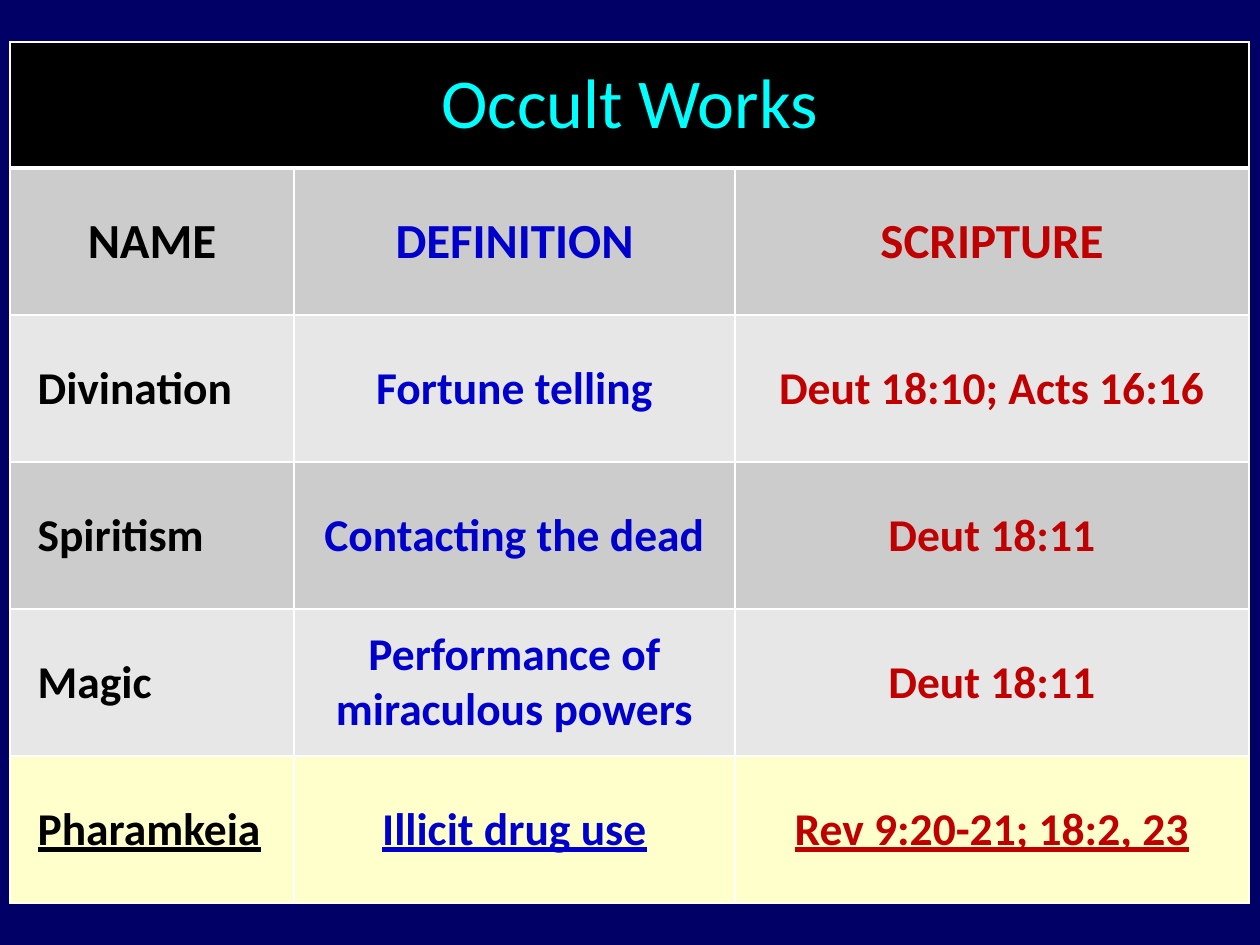
import pptx
import pptx.dml.color
import pptx.enum.text
import pptx.oxml.ns
import pptx.util
from lxml import etree

EMU_PER_PX = 914400 / 126
FONT = "Calibri"
CENTER = pptx.enum.text.PP_ALIGN.CENTER
LEFT = pptx.enum.text.PP_ALIGN.LEFT

TITLE = "Occult Works"
COLUMN_WIDTHS = [284, 441, 514]
COLUMN_COLORS = ["000000", "0000CC", "C00000"]
TITLE_HEIGHT, ROW_HEIGHT = 126, 147
ROWS = [
    ("NAME", "DEFINITION", "SCRIPTURE"),
    ("Divination", "Fortune telling", "Deut 18:10; Acts 16:16"),
    ("Spiritism", "Contacting the dead", "Deut 18:11"),
    ("Magic", "Performance of miraculous powers", "Deut 18:11"),
    ("Pharamkeia", "Illicit drug use", "Rev 9:20-21; 18:2, 23"),
]
BAND_FILLS = ["CCCCCC", "E7E7E7"]
HIGHLIGHT = "FFFFCC"


def px(length):
    return pptx.util.Emu(round(length * EMU_PER_PX))


def color(value):
    return pptx.dml.color.RGBColor.from_string(value)


def write_text(cell, text, size=26, ink="000000", bold=True, underline=False,
               align=CENTER, indent=0):
    cell.vertical_anchor = pptx.enum.text.MSO_ANCHOR.MIDDLE
    para = cell.text_frame.paragraphs[0]
    para.alignment = align
    if indent:
        para._p.get_or_add_pPr().set("marL", str(px(indent)))
    span = para.add_run()
    span.text = text
    span.font.name = FONT
    span.font.size = pptx.util.Pt(size)
    span.font.bold = bold
    span.font.underline = underline
    span.font.color.rgb = color(ink)


def paint_cell(cell, fill, top=1, bottom=1):
    """Fill a cell and give it white borders, widths in points."""
    cell.fill.solid()
    cell.fill.fore_color.rgb = color(fill)
    properties = cell._tc.get_or_add_tcPr()
    qn = pptx.oxml.ns.qn
    sides = [("a:lnL", 1), ("a:lnR", 1), ("a:lnT", top), ("a:lnB", bottom)]
    for position, (side, width) in enumerate(sides):
        line = etree.Element(qn(side), w=str(pptx.util.Pt(width)))
        solid = etree.SubElement(line, qn("a:solidFill"))
        etree.SubElement(solid, qn("a:srgbClr"), val="FFFFFF")
        properties.insert(position, line)


def add_grid(page, left, top):
    row_heights = [TITLE_HEIGHT] + [ROW_HEIGHT] * len(ROWS)
    frame = page.shapes.add_table(
        len(row_heights), len(COLUMN_WIDTHS), px(left), px(top),
        px(sum(COLUMN_WIDTHS)), px(sum(row_heights)))
    table = frame.table
    for column, width in zip(table.columns, COLUMN_WIDTHS):
        column.width = px(width)
    for row, height in zip(table.rows, row_heights):
        row.height = px(height)
    return table


def fill_title(table):
    for cell in table.rows[0].cells:
        paint_cell(cell, "000000", bottom=3)
    title = table.cell(0, 0)
    title.merge(table.cell(0, len(COLUMN_WIDTHS) - 1))
    write_text(title, TITLE, size=40, ink="00FFFF", bold=False)


def fill_rows(table):
    for index, words in enumerate(ROWS):
        heading = index == 0
        last = index == len(ROWS) - 1
        fill = HIGHLIGHT if last else BAND_FILLS[index % 2]
        for column, text in enumerate(words):
            cell = table.cell(index + 1, column)
            paint_cell(cell, fill, top=3 if heading else 1)
            is_name = column == 0 and not heading
            write_text(cell, text, size=28 if heading else 26,
                       ink=COLUMN_COLORS[column], underline=last,
                       align=LEFT if is_name else CENTER,
                       indent=15 if is_name else 0)


def main():
    deck = pptx.Presentation()
    deck.slide_width, deck.slide_height = px(1260), px(945)
    page = deck.slides.add_slide(deck.slide_layouts[6])

    # Navy background
    page.background.fill.solid()
    page.background.fill.fore_color.rgb = color("000066")

    # Table with title row, column headings and entries
    table = add_grid(page, left=10, top=42)
    fill_title(table)
    fill_rows(table)

    deck.save("out.pptx")


if __name__ == "__main__":
    main()
